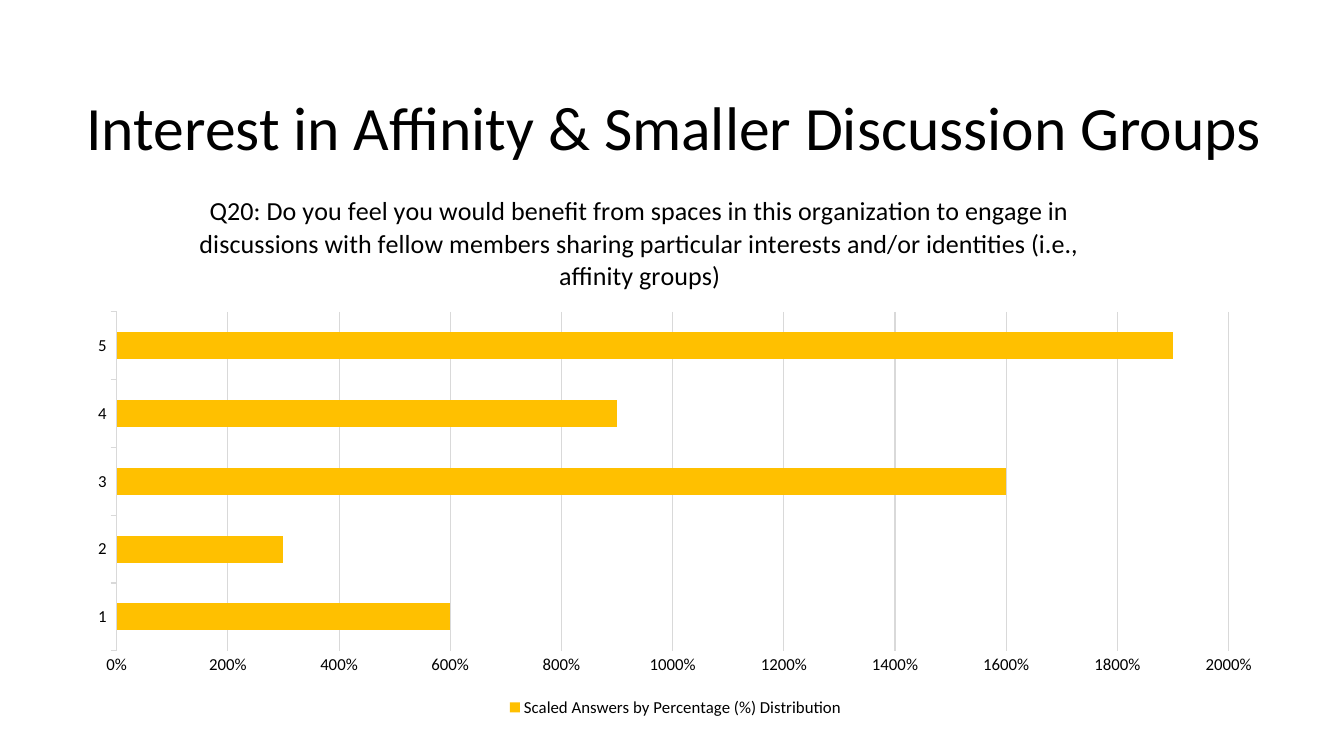
from pptx import Presentation
from pptx.chart.data import CategoryChartData
from pptx.dml.color import RGBColor
from pptx.enum.chart import XL_CHART_TYPE, XL_LEGEND_POSITION, XL_TICK_MARK
from pptx.enum.text import MSO_ANCHOR, MSO_AUTO_SIZE, PP_ALIGN
from pptx.oxml import parse_xml
from pptx.oxml.ns import nsdecls, qn
from pptx.util import Emu, Pt

BAR = XL_CHART_TYPE.BAR_CLUSTERED
BOTTOM = XL_LEGEND_POSITION.BOTTOM
TICK_OUT, TICK_NONE = XL_TICK_MARK.OUTSIDE, XL_TICK_MARK.NONE
MIDDLE, CENTER = MSO_ANCHOR.MIDDLE, PP_ALIGN.CENTER
NO_FIT = MSO_AUTO_SIZE.NONE

FONT = "Calibri"
BLACK, GRID, AMBER = "000000", "D9D9D9", "FFC000"
HEADING = "Interest in Affinity & Smaller Discussion Groups"
QUESTION = ("Q20: Do you feel you would benefit from spaces in this organization "
            "to engage in discussions with fellow members sharing particular "
            "interests and/or identities (i.e., affinity groups)")
SERIES = "Scaled Answers by Percentage (%) Distribution"
ANSWERS = {"1": 6, "2": 3, "3": 16, "4": 9, "5": 19}


def px(n):
    return Emu(n * 9525)


def rgb(color):
    return RGBColor.from_string(color)


def style_font(font, size):
    font.name = FONT
    font.size = Pt(size)
    font.bold = False
    font.color.rgb = rgb(BLACK)


def style_line(line):
    line.color.rgb = rgb(GRID)
    line.width = Pt(0.75)


def set_layout(element, before, inner=False, **fractions):
    """Place a chart part by fractions of the chart, ahead of the named child."""
    for old in element.findall(qn("c:layout")):
        element.remove(old)
    target = '<c:layoutTarget val="inner"/>' if inner else ""
    modes = "".join(f'<c:{k}Mode val="edge"/>' for k in "xy")
    values = "".join(f'<c:{k} val="{v}"/>' for k, v in fractions.items())
    layout = parse_xml(f'<c:layout {nsdecls("c")}><c:manualLayout>{target}{modes}'
                       f'{values}</c:manualLayout></c:layout>')
    element.find(qn(before)).addprevious(layout)


def add_heading(slide, x, y, w, h):
    sp = slide.shapes.title
    sp.left, sp.top, sp.width, sp.height = map(px, (x, y, w, h))
    tf = sp.text_frame
    tf.word_wrap = True
    tf.auto_size = NO_FIT
    tf.vertical_anchor = MIDDLE
    p = tf.paragraphs[0]
    p.alignment = CENTER
    p.line_spacing = 0.9
    r = p.add_run()
    r.text = HEADING
    style_font(r.font, 44)


def add_question(chart):
    title = chart.chart_title
    p = title.text_frame.paragraphs[0]
    p.alignment = CENTER
    r = p.add_run()
    r.text = QUESTION
    style_font(r.font, 18.6)
    title.include_in_layout = False
    set_layout(title._element, "c:overlay", x=0.1, y=0.03)


def style_axes(chart):
    answers, share = chart.category_axis, chart.value_axis
    for axis, tick in ((answers, TICK_OUT), (share, TICK_NONE)):
        style_font(axis.tick_labels.font, 12)
        axis.major_tick_mark = tick
        axis.minor_tick_mark = TICK_NONE
    style_line(answers.format.line)
    share.format.line.fill.background()
    style_line(share.major_gridlines.format.line)
    share.minimum_scale, share.maximum_scale, share.major_unit = 0, 20, 2
    share.tick_labels.number_format = "0%"
    share.tick_labels.number_format_is_linked = False


def add_answers_chart(slide, x, y, w, h):
    data = CategoryChartData()
    data.categories = list(ANSWERS)
    data.add_series(SERIES, list(ANSWERS.values()))
    frame = slide.shapes.add_chart(BAR, *map(px, (x, y, w, h)), data)
    chart = frame.chart
    style_font(chart.font, 10)
    add_question(chart)
    style_axes(chart)

    plot = chart.plots[0]
    plot.gap_width = 150
    plot.vary_by_categories = False
    fill = plot.series[0].format.fill
    fill.solid()
    fill.fore_color.rgb = rgb(AMBER)
    plot_area = chart._chartSpace.chart.plotArea
    set_layout(plot_area, "c:barChart", inner=True, x=0.035, y=0.256, w=0.925, h=0.616)

    chart.has_legend = True
    chart.legend.position = BOTTOM
    chart.legend.include_in_layout = False
    style_font(chart.legend.font, 12)


def main():
    prs = Presentation()
    prs.slide_width, prs.slide_height = px(1280), px(720)
    slide = prs.slides.add_slide(prs.slide_layouts[5])
    add_heading(slide, 69, 38, 1147, 172)
    add_answers_chart(slide, 71, 163, 1145, 524)
    prs.save("out.pptx")


if __name__ == "__main__":
    main()
